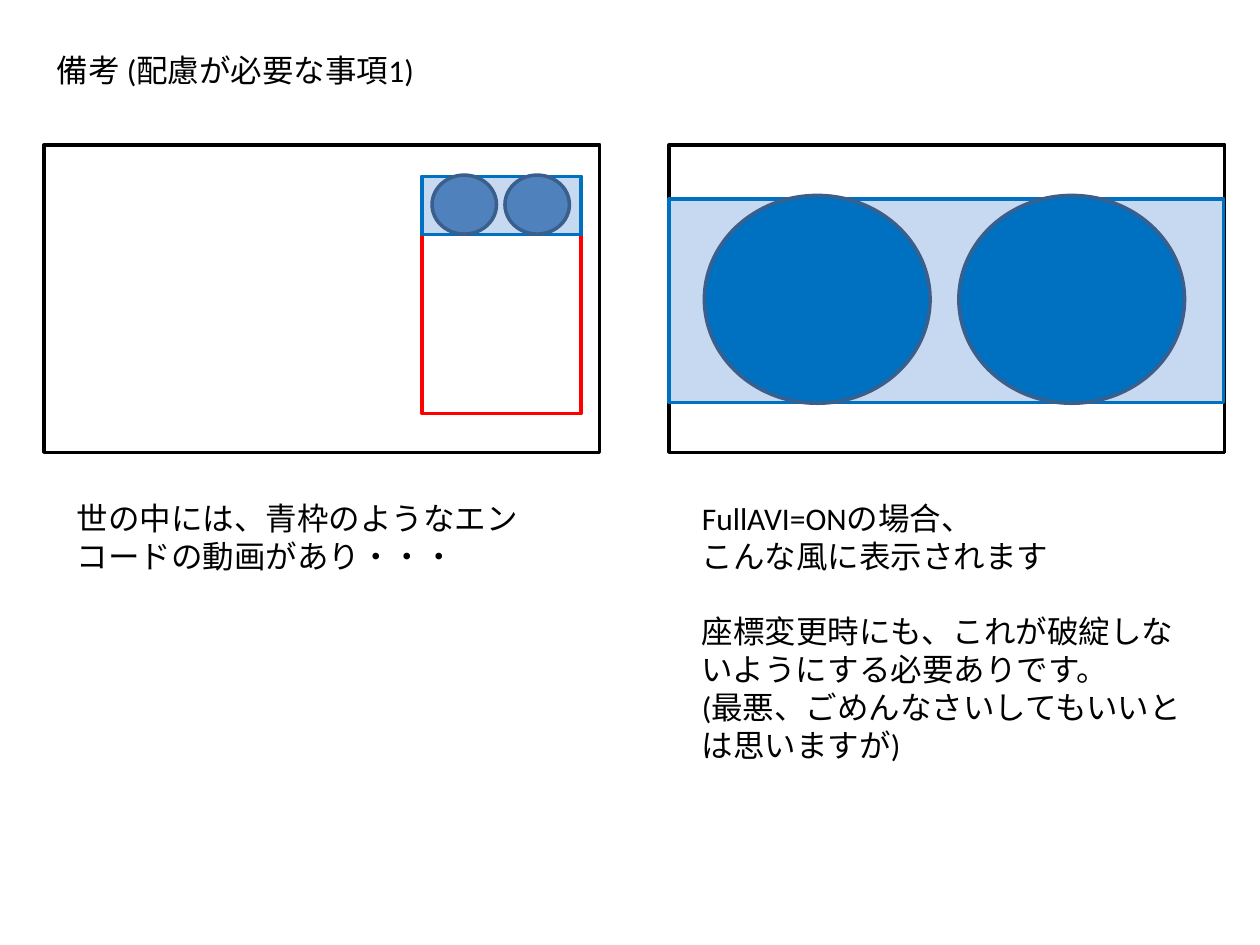
from pptx import Presentation
from pptx.dml.color import RGBColor
from pptx.enum.shapes import MSO_SHAPE
from pptx.enum.text import MSO_ANCHOR, MSO_AUTO_SIZE, PP_ALIGN
from pptx.util import Cm, Pt

RECTANGLE = MSO_SHAPE.RECTANGLE
OVAL = MSO_SHAPE.OVAL
TOP = MSO_ANCHOR.TOP
LEFT = PP_ALIGN.LEFT
NO_AUTOFIT = MSO_AUTO_SIZE.NONE
TITLE_ONLY = 5

BLACK = "000000"
RED = "FF0000"
BLUE = "0070C0"
PALE_BLUE = "C6D9F1"
MID_BLUE = "4F81BD"
DARK_BLUE = "3A5F8C"


def color(value):
    return RGBColor.from_string(value)


class Sketch:
    font = "Calibri"
    size = Pt(18)
    line_width = Pt(2)
    section_gap = Pt(21.6)

    def __init__(self, slide):
        self.slide = slide

    def fill_text(self, frame, sections):
        frame.word_wrap = True
        frame.auto_size = NO_AUTOFIT
        frame.vertical_anchor = TOP
        lines = [(line, number > 0 and index == 0)
                 for number, section in enumerate(sections)
                 for index, line in enumerate(section)]
        for position, (line, opens_section) in enumerate(lines):
            paragraph = frame.add_paragraph() if position else frame.paragraphs[0]
            paragraph.text = line
            paragraph.alignment = LEFT
            paragraph.space_before = self.section_gap if opens_section else Pt(0)
            paragraph.font.name = self.font
            paragraph.font.size = self.size
            paragraph.font.color.rgb = color(BLACK)

    def title(self, text, left, top, width, height):
        heading = self.slide.shapes.title
        heading.left, heading.top = Cm(left), Cm(top)
        heading.width, heading.height = Cm(width), Cm(height)
        self.fill_text(heading.text_frame, [[text]])

    def text(self, sections, left, top, width, height):
        note = self.slide.shapes.add_textbox(Cm(left), Cm(top), Cm(width), Cm(height))
        self.fill_text(note.text_frame, sections)

    def shape(self, kind, left, top, width, height, line, fill=None):
        figure = self.slide.shapes.add_shape(kind, Cm(left), Cm(top), Cm(width), Cm(height))
        figure.shadow.inherit = False
        if fill:
            figure.fill.solid()
            figure.fill.fore_color.rgb = color(fill)
        else:
            figure.fill.background()
        figure.line.color.rgb = color(line)
        figure.line.width = self.line_width

    def circles(self, left, top, width, height, step, fill):
        for index in range(2):
            self.shape(OVAL, left + index * step, top, width, height, DARK_BLUE, fill)


def main():
    deck = Presentation()
    deck.slide_width, deck.slide_height = Cm(25.4), Cm(19.05)
    sketch = Sketch(deck.slides.add_slide(deck.slide_layouts[TITLE_ONLY]))

    sketch.title("備考 (配慮が必要な事項1)", 0.89, 0.91, 7.72, 1.02)

    before_left, after_left = 0.89, 13.49
    explanations = {
        before_left: [["世の中には、青枠のようなエンコードの動画があり・・・"]],
        after_left: [
            ["FullAVI=ONの場合、", "こんな風に表示されます"],
            ["座標変更時にも、これが破綻しないようにする必要ありです。",
             "(最悪、ごめんなさいしてもいいとは思いますが)"],
        ],
    }
    for screen_left, sections in explanations.items():
        sketch.shape(RECTANGLE, screen_left, 2.92, 11.2, 6.2, BLACK)
        sketch.text(sections, screen_left + 0.41, 9.93, 10.39, 1.8 if len(sections) == 1 else 5.64)

    sketch.shape(RECTANGLE, 8.51, 3.56, 3.2, 4.78, RED)
    sketch.shape(RECTANGLE, 8.51, 3.56, 3.2, 1.17, BLUE, PALE_BLUE)
    sketch.circles(8.71, 3.53, 1.3, 1.19, 1.47, MID_BLUE)

    sketch.shape(RECTANGLE, after_left, 4.01, 11.18, 4.11, BLUE, PALE_BLUE)
    sketch.circles(14.2, 3.94, 4.55, 4.19, 5.13, BLUE)

    deck.save("out.pptx")


if __name__ == "__main__":
    main()
